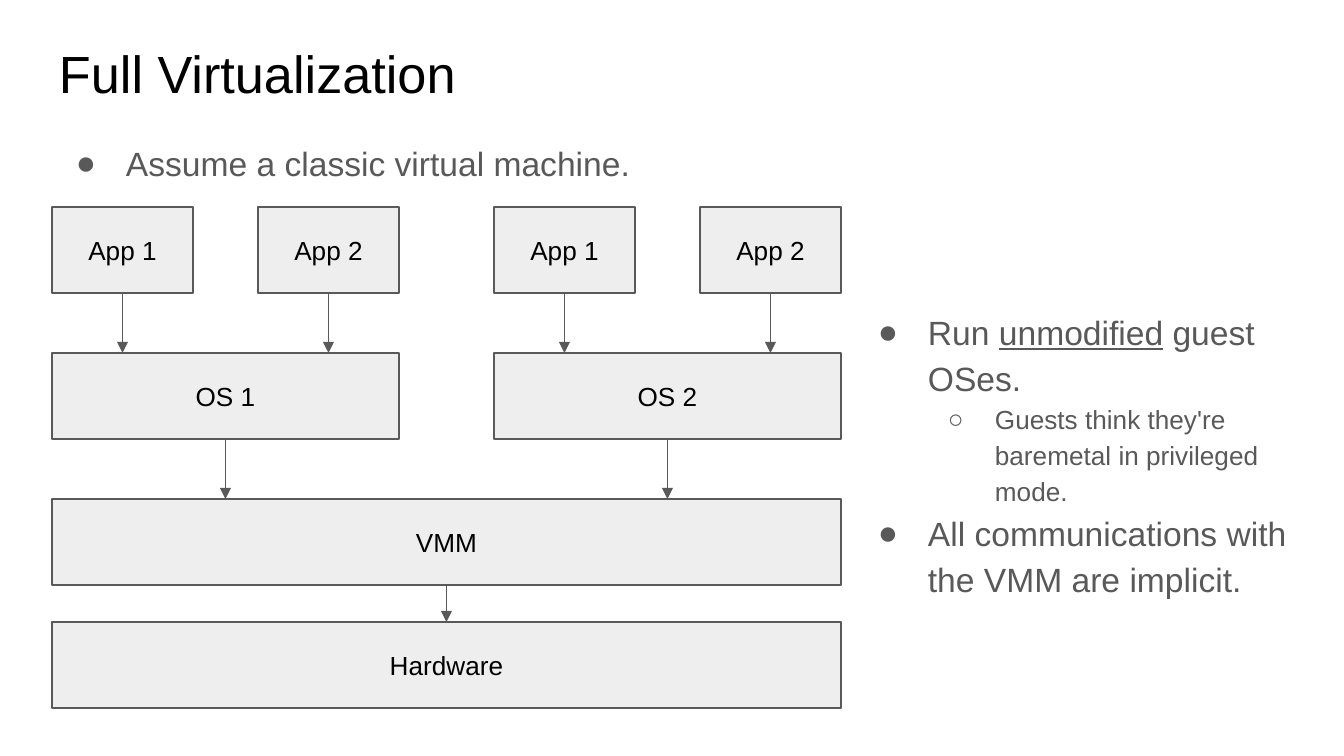
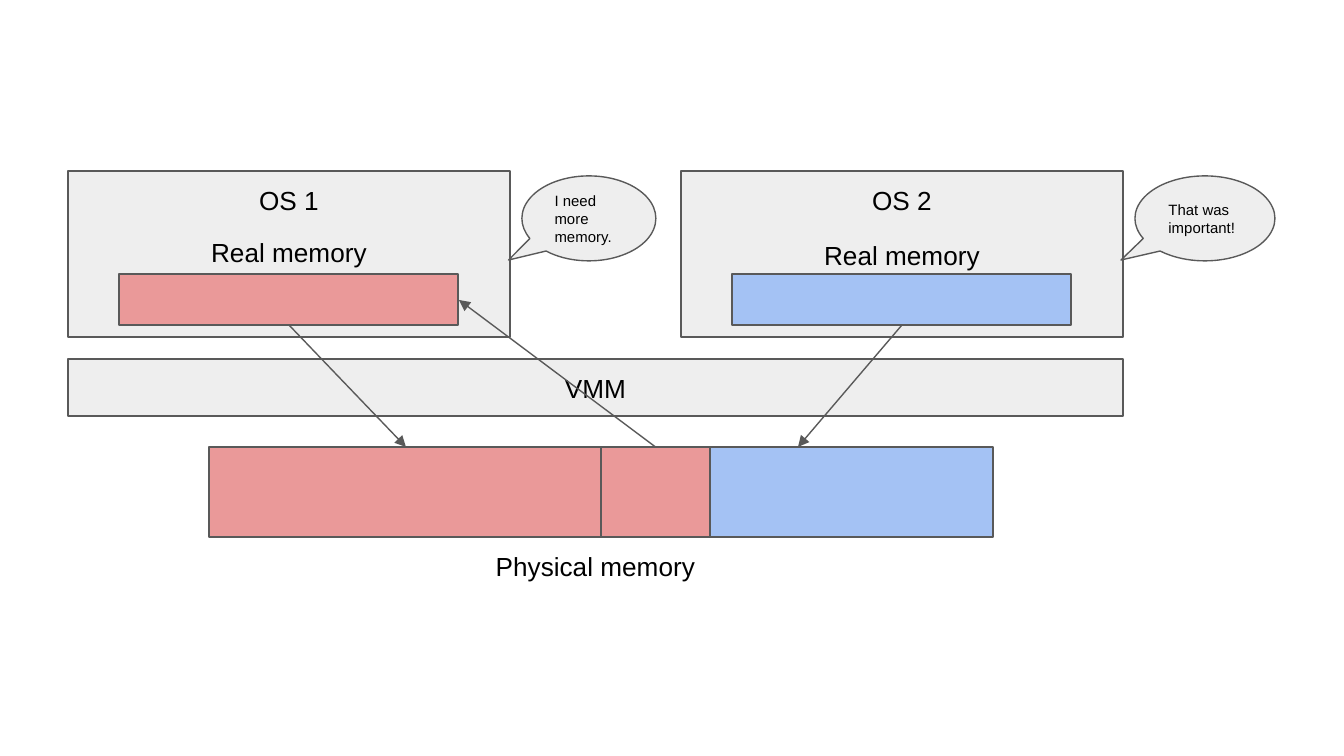
from dataclasses import dataclass
from lxml.etree import SubElement
from pptx import Presentation
from pptx.dml.color import RGBColor
from pptx.enum.shapes import MSO_CONNECTOR, MSO_SHAPE
from pptx.enum.text import MSO_ANCHOR, PP_ALIGN
from pptx.oxml.ns import qn
from pptx.util import Emu, Pt


@dataclass(frozen=True)
class Theme:
    font: str = "Arial"
    ink: str = "000000"
    gray: str = "595959"
    panel: str = "EEEEEE"
    red: str = "EA9999"
    blue: str = "A4C2F4"
    title: int = 28
    bullet: int = 18
    label: int = 14
    speech: int = 8
    line: float = 0.75
    spacing: float = 1.15
    inset: int = 13


THEME = Theme()
EMU_PER_PX = 9144000 / 1344
SLIDE_SIZE = (1344, 756)

TITLE = ("Full Virtualization", (46, 28, 1252, 85))
INTRO = ([(0, ["Assume a classic virtual machine."])], (46, 124, 1252, 85))
POINTS = (
    [
        (0, ["Run ", ("unmodified",), " guest OSes."]),
        (1, ["Guests think they're baremetal in privileged mode."]),
        (0, ["All communications with the VMM are implicit."]),
    ],
    (848, 293, 496, 290),
)
BULLETS = [("●", 67, -50, THEME.bullet), ("○", 134, -47, THEME.label)]

STACK_LEFT, STACK_WIDTH, LAYER_HEIGHT = 52, 789, 86
GUEST_WIDTH, APP_WIDTH = 347, 141
LAYERS = [
    (207, APP_WIDTH, ["App 1", "App 2", "App 1", "App 2"]),
    (353, GUEST_WIDTH, ["OS 1", "OS 2"]),
    (499, STACK_WIDTH, ["VMM"]),
    (622, STACK_WIDTH, ["Hardware"]),
]

MEMORY_LEFT, MEMORY_TOP, MEMORY_HALF, MEMORY_HEIGHT = 209, 447, 392, 90
EXTRA_WIDTH = 109
GUESTS = [
    ("OS 1", 68, THEME.red, 223, 406, "I need more memory.", 134),
    ("OS 2", 681, THEME.blue, 226, 798, "That was important!", 140),
]


def px(value):
    return Emu(round(value * EMU_PER_PX))


def apply(target, values):
    for name, value in values.items():
        setattr(target, name, value)


def add_run(paragraph, text, size, color, underline=None):
    run = paragraph.add_run()
    run.text = text
    apply(run.font, {"name": THEME.font, "size": Pt(size), "underline": underline})
    run.font.color.rgb = RGBColor.from_string(color)


def prepare_frame(shape, anchor):
    margins = {f"margin_{side}": px(THEME.inset) for side in ("left", "top", "right", "bottom")}
    apply(shape.text_frame, {"word_wrap": True, "vertical_anchor": anchor, **margins})
    return shape.text_frame


def write(shape, text, size=THEME.label, align=PP_ALIGN.CENTER, anchor=MSO_ANCHOR.TOP):
    paragraph = prepare_frame(shape, anchor).paragraphs[0]
    paragraph.alignment = align
    add_run(paragraph, text, size, THEME.ink)


def add_text_box(slide, box):
    return slide.shapes.add_textbox(*map(px, box))


def add_bullets(slide, items, box):
    frame = prepare_frame(add_text_box(slide, box), MSO_ANCHOR.TOP)
    for index, (level, runs) in enumerate(items):
        paragraph = frame.add_paragraph() if index else frame.paragraphs[0]
        symbol, margin, indent, size = BULLETS[level]
        apply(paragraph, {"level": level, "line_spacing": THEME.spacing})
        properties = paragraph._p.get_or_add_pPr()
        properties.set("marL", str(px(margin)))
        properties.set("indent", str(px(indent)))
        bullet_color = SubElement(properties, qn("a:buClr"))
        SubElement(bullet_color, qn("a:srgbClr"), val=THEME.gray)
        SubElement(properties, qn("a:buFont"), typeface=THEME.font)
        SubElement(properties, qn("a:buChar"), char=symbol)
        for run in runs:
            emphasized = isinstance(run, tuple)
            add_run(paragraph, run[0] if emphasized else run, size, THEME.gray, emphasized or None)


def outline(line):
    line.color.rgb = RGBColor.from_string(THEME.gray)
    line.width = Pt(THEME.line)


def add_block(slide, box, fill=THEME.panel, kind=MSO_SHAPE.RECTANGLE):
    shape = slide.shapes.add_shape(kind, *map(px, box))
    shape.shadow.inherit = False
    shape.fill.solid()
    shape.fill.fore_color.rgb = RGBColor.from_string(fill)
    outline(shape.line)
    return shape


def add_arrow(slide, start, end):
    connector = slide.shapes.add_connector(MSO_CONNECTOR.STRAIGHT, *map(px, start + end))
    outline(connector.line)
    SubElement(connector.line._get_or_add_ln(), qn("a:tailEnd"), type="triangle")
    SubElement(connector._element.spPr, qn("a:effectLst"))


def layer_lefts(count):
    guest_step = STACK_WIDTH - GUEST_WIDTH
    app_step = GUEST_WIDTH - APP_WIDTH
    offsets = {1: [0], 2: [0, guest_step], 4: [0, app_step, guest_step, guest_step + app_step]}
    return [STACK_LEFT + offset for offset in offsets[count]]


def build_stack_slide(slide):
    title, title_box = TITLE
    write(add_text_box(slide, title_box), title, THEME.title, PP_ALIGN.LEFT)
    for items, box in (INTRO, POINTS):
        add_bullets(slide, items, box)
    next_tops = [top for top, _, _ in LAYERS[1:]] + [None]
    for (top, width, names), next_top in zip(LAYERS, next_tops):
        for name, left in zip(names, layer_lefts(len(names))):
            block = add_block(slide, (left, top, width, LAYER_HEIGHT))
            write(block, name, anchor=MSO_ANCHOR.MIDDLE)
            if next_top:
                center = left + width / 2
                add_arrow(slide, (center, top + LAYER_HEIGHT), (center, next_top))


def build_memory_slide(slide):
    write(add_block(slide, (68, 359, 1055, 57)), "VMM")
    seam = MEMORY_LEFT + MEMORY_HALF
    for left, width, color in (
        (MEMORY_LEFT, MEMORY_HALF, THEME.red),
        (seam, MEMORY_HALF, THEME.blue),
        (seam, EXTRA_WIDTH, THEME.red),
    ):
        add_block(slide, (left, MEMORY_TOP, width, MEMORY_HEIGHT), color)
    write(add_text_box(slide, (471, 537, 249, 57)), "Physical memory")

    for name, left, color, label_top, target, speech, speech_width in GUESTS:
        write(add_block(slide, (left, 171, 442, 166)), name)
        add_block(slide, (left + 51, 274, 339, 51), color)
        write(add_text_box(slide, (left + 78, label_top, 286, 57)), "Real memory")
        add_arrow(slide, (left + 221, 325), (target, MEMORY_TOP))
        callout_box = (left + 454, 176, speech_width, 85)
        callout = add_block(slide, callout_box, kind=MSO_SHAPE.OVAL_CALLOUT)
        callout.adjustments[0] = -0.6
        callout.adjustments[1] = 0.49
        write(callout, speech, THEME.speech, PP_ALIGN.LEFT, MSO_ANCHOR.MIDDLE)
    add_arrow(slide, (seam + EXTRA_WIDTH / 2, MEMORY_TOP), (459, 300))


def main():
    presentation = Presentation()
    width, height = map(px, SLIDE_SIZE)
    apply(presentation, {"slide_width": width, "slide_height": height})
    for build in (build_stack_slide, build_memory_slide):
        build(presentation.slides.add_slide(presentation.slide_layouts[6]))
    presentation.save("out.pptx")


if __name__ == "__main__":
    main()
